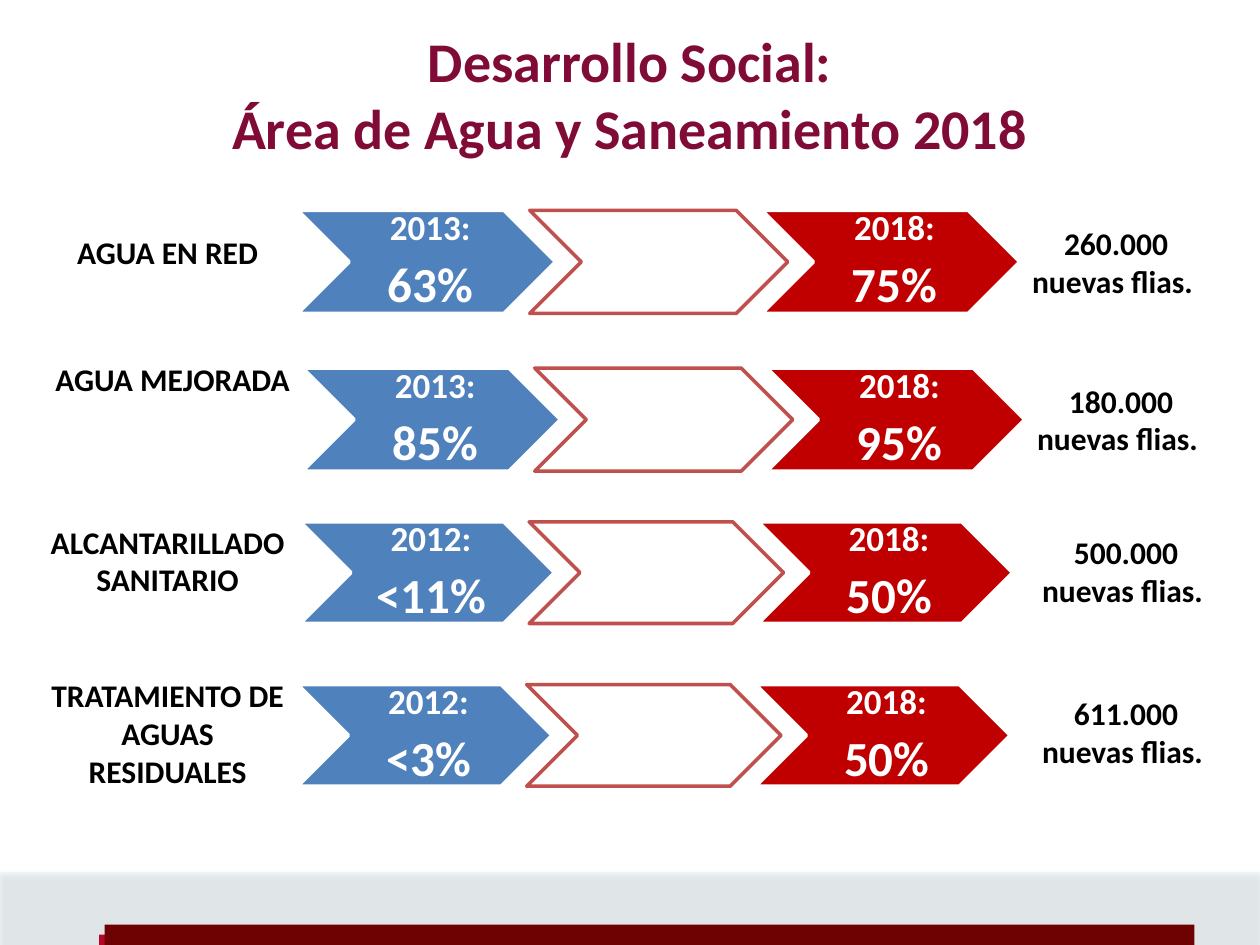
from lxml import etree
from pptx import Presentation
from pptx.dml.color import RGBColor
from pptx.enum import shapes, text
from pptx.oxml import ns
from pptx.util import Cm, Pt

FONT = "Calibri"
WINE = RGBColor(0x80, 0x0B, 0x37)
BLUE = RGBColor(0x4F, 0x81, 0xBD)
RED = RGBColor(0xC0, 0x00, 0x00)
ROSE = RGBColor(0xC0, 0x50, 0x4D)
WHITE = RGBColor(0xFF, 0xFF, 0xFF)
BLACK = RGBColor(0, 0, 0)
ICE = RGBColor(0xDB, 0xEE, 0xF4)
CRIMSON = RGBColor(0xB6, 0x05, 0x27)
MAROON = RGBColor(0x6E, 0x01, 0x01)

TITLE = ["Desarrollo Social:", "Área de Agua y Saneamiento 2018"]
# label, its place; start, goal; first chevron's place and size; gain, its place
ROWS = [
    ("AGUA EN RED", (0.58, 4.57), ("2013:", "63%"), ("2018:", "75%"),
     (6.0, 4.24, 5.2, 2.08), "260.000", (20.4, 4.39)),
    ("AGUA MEJORADA", (0.68, 7.14), ("2013:", "85%"), ("2018:", "95%"),
     (6.1, 7.42, 5.2, 2.08), "180.000", (20.5, 7.57)),
    ("ALCANTARILLADO SANITARIO", (0.58, 10.41), ("2012:", "<11%"), ("2018:", "50%"),
     (6.05, 10.52, 5.13, 2.05), "500.000", (20.6, 10.62)),
    ("TRATAMIENTO DE AGUAS RESIDUALES", (0.58, 13.51), ("2012:", "<3%"), ("2018:", "50%"),
     (6.0, 13.8, 5.13, 2.05), "611.000", (20.6, 13.87)),
]
UNIT = " nuevas flias. "
STEP = 0.9  # chevron pitch as a share of its width
SHADOW = ('<a:effectLst xmlns:a="%s"><a:outerShdw blurRad="39370" dist="22860" dir="5400000" '
          'rotWithShape="0"><a:srgbClr val="000000"><a:alpha val="35000"/></a:srgbClr>'
          '</a:outerShdw></a:effectLst>' % ns.nsdecls("a").split('"')[1])


def style(par, size, color):
    par.alignment = text.PP_ALIGN.CENTER
    font = par.font
    font.name, font.size, font.bold = FONT, Pt(size), True
    font.color.rgb = color


def form(home, kind, box, fill, line=None):
    item = home.add_shape(kind, *map(Cm, box))
    item.shadow.inherit = False
    item.fill.solid()
    item.fill.fore_color.rgb = fill
    if line is None:
        item.line.fill.background()
    else:
        item.line.color.rgb = line
        item.line.width = Pt(2)
    return item


def note(home, words, place, wide, high):
    frame = home.add_textbox(*map(Cm, (*place, wide, high))).text_frame
    frame.word_wrap = True
    frame.text = words
    style(frame.paragraphs[0], 18, BLACK)


def fill_in(item, lines):
    """Write year and share into a chevron."""
    frame = item.text_frame
    frame.vertical_anchor = text.MSO_ANCHOR.MIDDLE
    frame.margin_left = Cm(0.22)
    frame.margin_right = frame.margin_top = frame.margin_bottom = Cm(0.07)
    frame.text = "\n".join(lines)
    for par, size, gap in zip(frame.paragraphs, (20, 28), (7, 10)):
        par.line_spacing = 0.9
        par.space_after = Pt(gap)
        style(par, size, WHITE)


def add_row(slide, label, spot, start, goal, box, gain, side):
    home = slide.shapes.add_group_shape().shapes
    left, top, wide, high = box
    looks = [(BLUE, WHITE, start), (WHITE, ROSE, None), (RED, WHITE, goal)]
    for i, (fill, line, lines) in enumerate(looks):
        spread = (left + i * STEP * wide, top, wide, high)
        item = form(home, shapes.MSO_SHAPE.CHEVRON, spread, fill, line)
        if lines:
            fill_in(item, lines)
    note(home, label, spot, 5.6, 1.02)
    note(home, gain + UNIT, side, 4.2, 1.8)


def add_foot(slide):
    rect = shapes.MSO_SHAPE.RECTANGLE
    band = form(slide.shapes, rect, (0, 17.58, 25.4, 1.47), ICE)
    props = band._element.spPr
    tint = props.find(ns.qn("a:solidFill"))[0]
    etree.SubElement(tint, ns.qn("a:alpha")).set("val", "32000")
    props.replace(props.find(ns.qn("a:effectLst")), etree.fromstring(SHADOW))
    form(slide.shapes, rect, (2.0, 18.84, 21.4, 0.64), CRIMSON)
    form(slide.shapes, rect, (2.11, 18.64, 21.97, 0.41), MAROON)


def add_title(slide):
    title = slide.shapes.title
    title.left, title.top, title.width, title.height = map(Cm, (1.2, 0.4, 23, 3))
    frame = title.text_frame
    frame.word_wrap = True
    frame.auto_size = text.MSO_AUTO_SIZE.NONE
    frame.vertical_anchor = text.MSO_ANCHOR.TOP
    frame.text = "\n".join(TITLE)
    for par in frame.paragraphs:
        par.space_before = Pt(0)
        style(par, 32, WINE)


def main():
    deck = Presentation()
    deck.slide_width, deck.slide_height = Cm(25.4), Cm(19.05)
    slide = deck.slides.add_slide(deck.slide_layouts[5])
    add_foot(slide)
    add_title(slide)
    for row in ROWS:
        add_row(slide, *row)
    deck.save("out.pptx")


if __name__ == "__main__":
    main()
